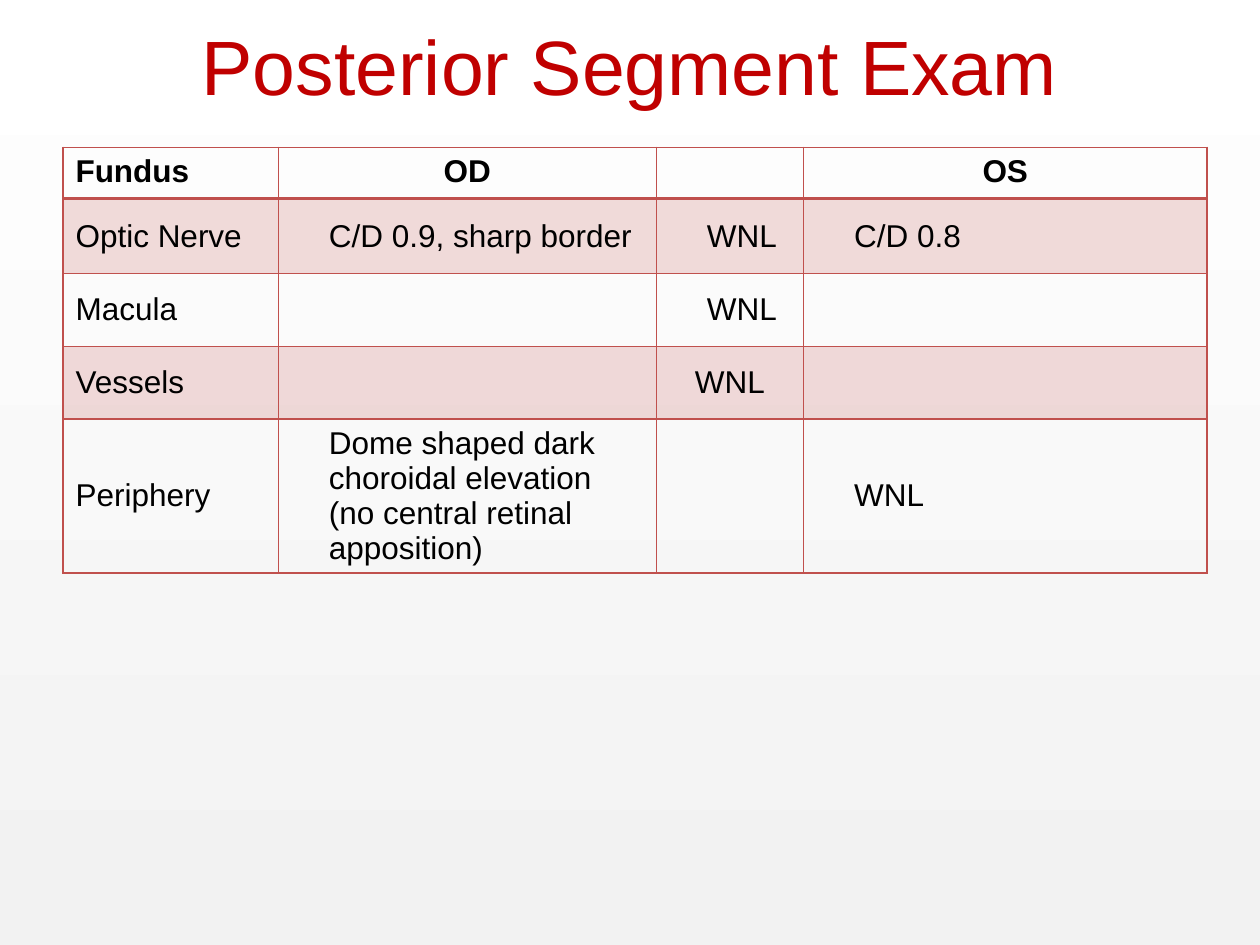
from lxml import etree
from pptx import Presentation
from pptx.dml.color import RGBColor
from pptx.enum import text
from pptx.oxml import ns
from pptx.util import Cm, Pt

RED = "C0504D"
COLUMNS = [4.34, 7.62, 2.97, 8.13]
ROWS = [1.04, 1.5, 1.47, 1.47, 1.47]
FINDINGS = [
    ["Fundus", "OD", "", "OS"],
    ["Optic Nerve", "C/D 0.9, sharp border", "WNL", "C/D 0.8"],
    ["Macula", "", "WNL", ""],
    ["Vessels", "", "WNL", ""],
    ["Periphery", "Dome shaped dark choroidal elevation (no central retinal apposition)", "", "WNL"],
]
VESSELS_WNL = (3, 2)  # the one finding centred in its cell


def rgb(value):
    return RGBColor.from_string(value)


def sub(parent, tag, **attrs):
    return etree.SubElement(parent, ns.qn(tag), attrs)


def format_paragraph(p, size, color, align, bold=False):
    p.alignment = align
    p.font.name, p.font.size, p.font.bold = "Arial", Pt(size), bold
    p.font.color.rgb = rgb(color)


def set_background(s):
    """Fade from light grey at the bottom to white at the top."""
    fill = s.background.fill
    fill.gradient()
    fill.gradient_angle = 90
    for stop, color in zip(fill.gradient_stops, ("F2F2F2", "FFFFFF")):
        stop.color.rgb = rgb(color)


def add_title(s, title):
    sp = s.shapes.title
    sp.left, sp.top, sp.width, sp.height = Cm(1.27), Cm(-0.28), Cm(22.86), Cm(3.18)
    tf = sp.text_frame
    tf.text = title
    tf.vertical_anchor = text.MSO_ANCHOR.MIDDLE
    format_paragraph(tf.paragraphs[0], 44, "C00000", text.PP_ALIGN.CENTER)


def set_borders(cell, widths):
    """Draw the left, right, top and bottom lines, with widths in points."""
    tcPr = cell._tc.get_or_add_tcPr()
    for i, (side, width) in enumerate(zip("LRTB", widths)):
        ln = sub(tcPr, f"a:ln{side}", w=str(Pt(width)))
        sub(sub(ln, "a:solidFill"), "a:srgbClr", val=RED)
        tcPr.insert(i, ln)  # lines come before the fill


def fill_cell(cell, shaded):
    if not shaded:
        cell.fill.background()
        return
    cell.fill.solid()
    cell.fill.fore_color.rgb = rgb(RED)
    color = cell._tc.tcPr.find(".//" + ns.qn("a:srgbClr"))
    sub(color, "a:alpha", val="20000")


def format_cell(cell, row, col):
    header = row == 0
    centred = (header and col > 0) or (row, col) == VESSELS_WNL
    align = text.PP_ALIGN.CENTER if centred else text.PP_ALIGN.LEFT
    format_paragraph(cell.text_frame.paragraphs[0], 18, "000000", align, header)
    if not header:
        cell.vertical_anchor = text.MSO_ANCHOR.MIDDLE
        if col > 0:
            cell.margin_left = Cm(0 if centred else 1.02)
        if col == 2:
            cell.margin_right = Cm(0)
    fill_cell(cell, shaded=row % 2 == 1)
    set_borders(cell, (1, 1, 2 if row == 1 else 1, 2 if header else 1))


def add_findings_table(s):
    frame = s.shapes.add_table(len(ROWS), len(COLUMNS), Cm(1.27), Cm(2.97),
                               Cm(sum(COLUMNS)), Cm(sum(ROWS)))
    table = frame.table
    table.first_row = table.horz_banding = False
    for column, width in zip(table.columns, COLUMNS):
        column.width = Cm(width)
    for i, height in enumerate(ROWS):
        table.rows[i].height = Cm(height)
        for j, finding in enumerate(FINDINGS[i]):
            cell = table.cell(i, j)
            cell.text = finding
            format_cell(cell, i, j)


def main():
    prs = Presentation()
    prs.slide_width, prs.slide_height = Cm(25.4), Cm(19.05)
    s = prs.slides.add_slide(prs.slide_layouts[5])
    set_background(s)
    add_title(s, "Posterior Segment Exam")
    add_findings_table(s)
    prs.save("out.pptx")


if __name__ == "__main__":
    main()
